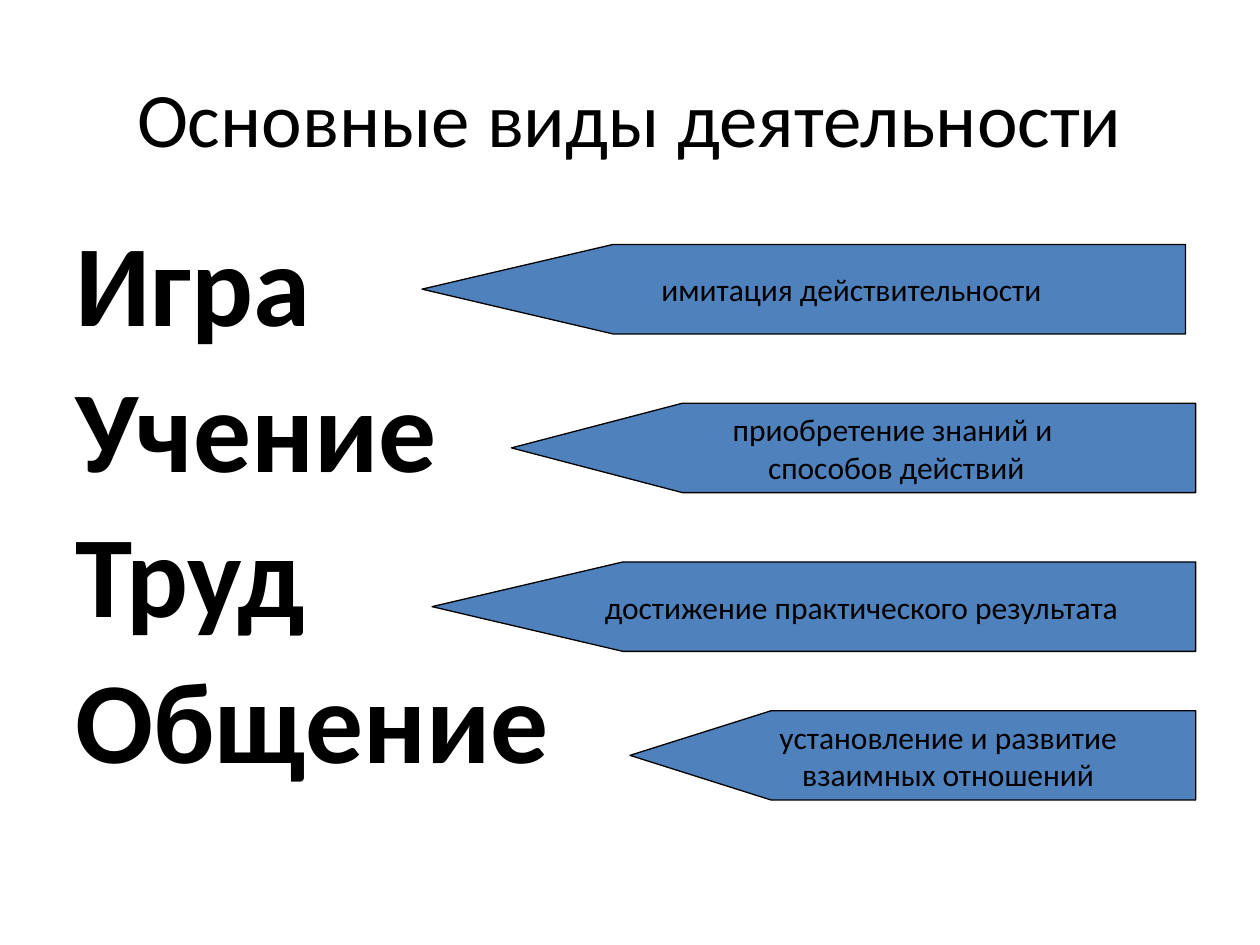
from pptx import Presentation
from pptx.dml.color import RGBColor
from pptx.enum.shapes import MSO_SHAPE
from pptx.enum.text import MSO_ANCHOR, PP_ALIGN
from pptx.util import Inches, Pt

PLATE = MSO_SHAPE.PENTAGON
MIDDLE = MSO_ANCHOR.MIDDLE
LEFT, CENTER = PP_ALIGN.LEFT, PP_ALIGN.CENTER

BLACK, BLUE = "000000", "4F81BD"
HEIGHT = 0.71

# Activity, meaning (one entry per line), arrow left, top and width
ITEMS = [
    ("Игра", ["имитация действительности"], 3.35, 1.94, 6.06),
    ("Учение", ["приобретение знаний и ", "способов действий"], 4.06, 3.2, 5.43),
    ("Труд", ["достижение практического результата"], 3.43, 4.46, 6.06),
    ("Общение", ["установление и развитие", "взаимных отношений"], 5, 5.64, 4.49),
]


def color(code):
    return RGBColor.from_string(code)


def write(frame, lines, size, align, bold=False):
    frame.text = "\n".join(lines)
    for para in frame.paragraphs:
        para.alignment = align
        font = para.font
        font.name, font.size, font.bold = "Calibri", Pt(size), bold
        font.color.rgb = color(BLACK)


def add_title(slide, text):
    title = slide.shapes.title
    title.left, title.top = Inches(0.5), Inches(0.3)
    title.width, title.height = Inches(9), Inches(1.25)
    title.text_frame.vertical_anchor = MIDDLE
    write(title.text_frame, [text], 44, CENTER)


def add_names(slide, names):
    box = slide.shapes.add_textbox(
        Inches(0.5), Inches(1.75), Inches(4.66), Inches(4.95))
    frame = box.text_frame
    frame.word_wrap = True
    write(frame, names, 66, LEFT, bold=True)
    for para in frame.paragraphs:
        para.line_spacing = 0.9
        para.space_before = Pt(12)


def add_arrow(slide, lines, left, top, width):
    arrow = slide.shapes.add_shape(
        PLATE, Inches(left), Inches(top), Inches(width), Inches(HEIGHT))
    arrow.shadow.inherit = False
    # The point faces left and takes a quarter of the width
    arrow._element.spPr.get_or_add_xfrm().set("flipH", "1")
    arrow.adjustments[0] = width / 4 / HEIGHT
    arrow.fill.solid()
    arrow.fill.fore_color.rgb = color(BLUE)
    arrow.line.color.rgb = color(BLACK)
    arrow.line.width = Pt(0.75)
    frame = arrow.text_frame
    frame.word_wrap = False
    frame.vertical_anchor = MIDDLE
    write(frame, lines, 18, CENTER)


def main():
    deck = Presentation()
    deck.slide_width, deck.slide_height = Inches(10), Inches(7.5)
    slide = deck.slides.add_slide(deck.slide_layouts[5])

    add_title(slide, "Основные виды деятельности")
    add_names(slide, [item[0] for item in ITEMS])
    for _, lines, left, top, width in ITEMS:
        add_arrow(slide, lines, left, top, width)

    deck.save("out.pptx")


if __name__ == "__main__":
    main()
